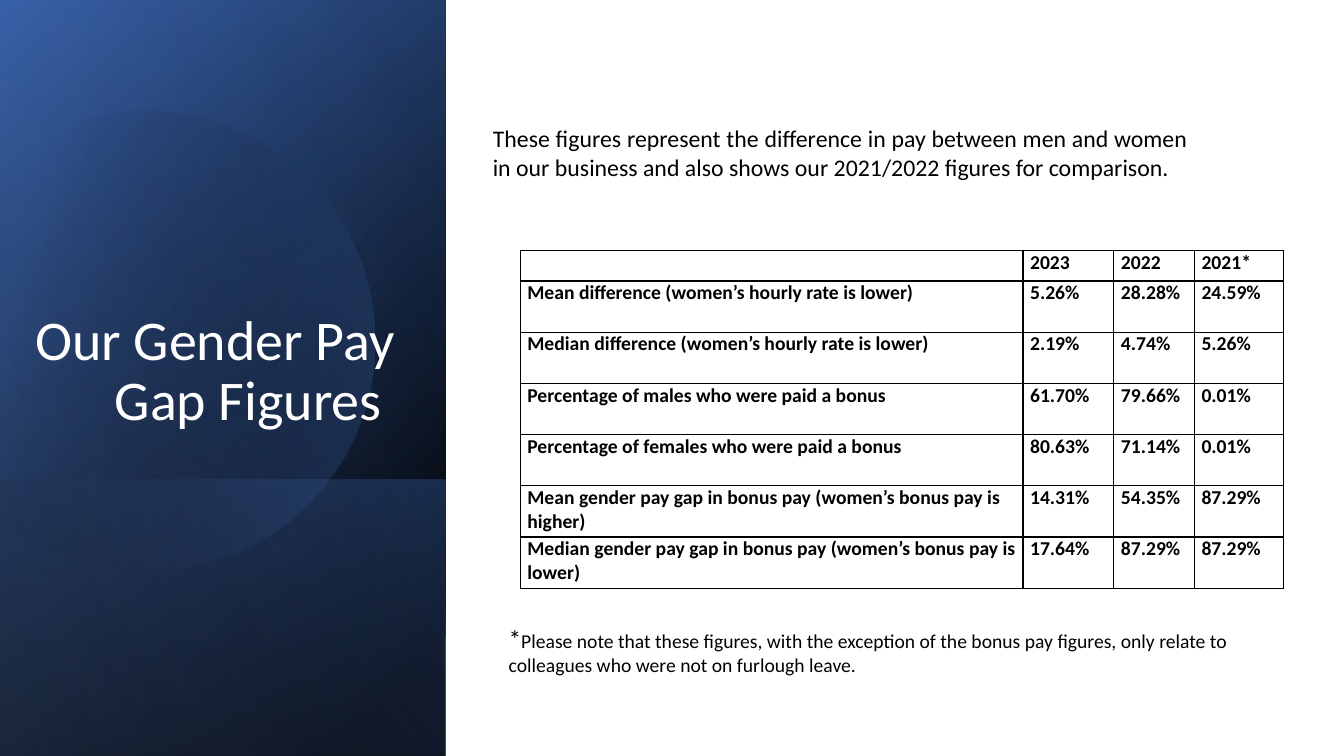
from math import cos, radians, sin

from lxml.etree import SubElement
from pptx import Presentation
from pptx.dml.color import RGBColor
from pptx.enum.shapes import MSO_SHAPE as Shape
from pptx.enum.text import MSO_ANCHOR as Anchor, PP_ALIGN as Align
from pptx.oxml.ns import qn
from pptx.util import Cm, Pt

THEME = {
    "font": "Calibri", "white": "FFFFFF", "black": "000000",
    "navy": "2F5597", "blue": "4472C4", "pale": "8FAADC",
    "title": 40, "intro": 17, "star": 18, "body": 14, "border": 1,
}

TITLE = "Our Gender Pay Gap Figures "
INTRO = ("These figures represent the difference in pay between men and women "
         "in our business and also shows our 2021/2022 figures for comparison.")
NOTE = ("Please note that these figures, with the exception of the bonus pay figures, "
        "only relate to colleagues who were not on furlough leave.")
ROWS = [
    ("", "2023", "2022", "2021*"),
    ("Mean difference (women’s hourly rate is lower)", "5.26%", "28.28%", "24.59%"),
    ("Median difference (women’s hourly rate is lower)", "2.19%", "4.74%", "5.26%"),
    ("Percentage of males who were paid a bonus", "61.70%", "79.66%", "0.01%"),
    ("Percentage of females who were paid a bonus", "80.63%", "71.14%", "0.01%"),
    ("Mean gender pay gap in bonus pay (women’s bonus pay is higher)",
     "14.31%", "54.35%", "87.29%"),
    ("Median gender pay gap in bonus pay (women’s bonus pay is lower)",
     "17.64%", "87.29%", "87.29%"),
]
COLS = (12.67, 2.29, 2.03, 2.24)
HEAD_H, ROW_H = 0.66, 1.29

SLIDE_W, SLIDE_H = 33.87, 19.05
PANEL_W = 11.23
BASE_PANELS = [
    (SLIDE_H, 50, [(8, "black", 100), (100, "navy", 100)]),
    (SLIDE_H, 30, [(0, "black", 0), (99, "blue", 46)]),
    (6.96, 130, [(2, "blue", 29), (100, "black", 30)]),
]
TOP_PANEL = (SLIDE_H, 120, [(0, "black", 0), (99, "pale", 11)])

DISC_CENTRE, DISC_TURN = (4.03, 8.5), -16.1
DISC_STOPS = [(29, "black", 0), (100, "blue", 43)]
DISC_START = (3.78, 2.79)
DISC_PATH = [
    [(6.25, 2.84), (8.51, 4.5), (9.22, 6.99)],
    [(10.11, 10.11), (8.33, 13.29), (5.26, 14.17)],
    [(3.33, 14.73), (1.35, 14.25), (-0.08, 13.06)],
    [(-0.38, 12.78)], [(-0.38, 4.45)], [(0, 4.09)],
    [(0.58, 3.61), (1.27, 3.25), (2.03, 3.02)],
    [(2.62, 2.87), (3.2, 2.79), DISC_START],
]


def write(tf, *runs, align=Align.LEFT, bold=False, color="black", spacing=None):
    p = tf.paragraphs[0]
    p.alignment = align
    p.line_spacing = spacing
    for text, size in runs:
        r = p.add_run()
        r.text = text
        r.font.name, r.font.size, r.font.bold = THEME["font"], Pt(THEME[size]), bold
        r.font.color.rgb = RGBColor.from_string(THEME[color])


def text_box(slide, box, *runs, anchor=Anchor.TOP, **style):
    tf = slide.shapes.add_textbox(*map(Cm, box)).text_frame
    tf.word_wrap = True
    tf.vertical_anchor = anchor
    write(tf, *runs, **style)


def plain(sp):
    sp.shadow.inherit = False
    sp.line.fill.background()


def gradient(sp, angle, stops):
    plain(sp)
    sp.fill.gradient()
    grad = sp._element.spPr.find(qn("a:gradFill"))
    grad.set("rotWithShape", "1")
    for child in list(grad):
        grad.remove(child)
    stop_list = SubElement(grad, qn("a:gsLst"))
    for pos, color, opacity in stops:
        gs = SubElement(stop_list, qn("a:gs"), pos=str(pos * 1000))
        clr = SubElement(gs, qn("a:srgbClr"), val=THEME[color])
        SubElement(clr, qn("a:alpha"), val=str(opacity * 1000))
    SubElement(grad, qn("a:lin"), ang=str(angle * 60000), scaled="0")


def panel(slide, height, angle, stops):
    left = (PANEL_W - height) / 2
    top = SLIDE_H - height / 2 - PANEL_W / 2
    sp = slide.shapes.add_shape(Shape.RECTANGLE, Cm(left), Cm(top), Cm(height), Cm(PANEL_W))
    sp.rotation = 90
    sp._element.spPr.find(qn("a:xfrm")).set("flipH", "1")
    gradient(sp, angle, stops)


def curve(points, steps=16):
    for i in range(1, steps + 1):
        t = i / steps
        weights = ((1 - t) ** 3, 3 * t * (1 - t) ** 2, 3 * t * t * (1 - t), t ** 3)
        yield tuple(sum(w * pt[axis] for w, pt in zip(weights, points)) for axis in (0, 1))


def disc(slide):
    outline = [DISC_START]
    for part in DISC_PATH:
        outline += curve([outline[-1], *part]) if len(part) == 3 else part
    c, s = cos(radians(-DISC_TURN)), sin(radians(-DISC_TURN))
    cx, cy = DISC_CENTRE
    points = [(Cm(cx + (x - cx) * c - (y - cy) * s), Cm(cy + (x - cx) * s + (y - cy) * c))
              for x, y in outline]
    builder = slide.shapes.build_freeform(*points[0])
    builder.add_line_segments(points[1:], close=True)
    sp = builder.convert_to_shape()
    sp.rotation = DISC_TURN
    gradient(sp, 30, DISC_STOPS)


def add_borders(cell):
    tc_pr = cell._tc.get_or_add_tcPr()
    for side in ("lnL", "lnR", "lnT", "lnB"):
        ln = SubElement(tc_pr, qn(f"a:{side}"), w=str(Pt(THEME["border"])))
        SubElement(SubElement(ln, qn("a:solidFill")), qn("a:srgbClr"), val=THEME["black"])


def pay_table(slide, left, top):
    height = HEAD_H + ROW_H * (len(ROWS) - 1)
    table = slide.shapes.add_table(len(ROWS), len(COLS), Cm(left), Cm(top),
                                   Cm(sum(COLS)), Cm(height)).table
    table.first_row = table.horz_banding = False
    for col, width in zip(table.columns, COLS):
        col.width = Cm(width)
    for i, values in enumerate(ROWS):
        table.rows[i].height = Cm(ROW_H if i else HEAD_H)
        for j, value in enumerate(values):
            cell = table.cell(i, j)
            cell.margin_left = cell.margin_right = Cm(0.18)
            cell.margin_top = cell.margin_bottom = 0
            add_borders(cell)
            cell.fill.background()
            write(cell.text_frame, (value, "body"), bold=True)


def main():
    prs = Presentation()
    prs.slide_width, prs.slide_height = Cm(SLIDE_W), Cm(SLIDE_H)
    slide = prs.slides.add_slide(prs.slide_layouts[6])
    backdrop = slide.shapes.add_shape(Shape.RECTANGLE, 0, 0, prs.slide_width, prs.slide_height)
    plain(backdrop)
    backdrop.fill.solid()
    backdrop.fill.fore_color.rgb = RGBColor.from_string(THEME["white"])
    for spot in BASE_PANELS:
        panel(slide, *spot)
    disc(slide)
    panel(slide, *TOP_PANEL)
    text_box(slide, (0.46, 1.63, 9.73, 9.4), (TITLE, "title"), anchor=Anchor.BOTTOM,
             align=Align.RIGHT, color="white", spacing=0.9)
    text_box(slide, (12.17, 3, 18.01, 1.7), (INTRO, "intro"), align=Align.JUSTIFY)
    pay_table(slide, 13.11, 6.32)
    text_box(slide, (12.57, 15.57, 19.91, 1.63), ("*", "star"), (NOTE, "body"))
    prs.save("out.pptx")


if __name__ == "__main__":
    main()
